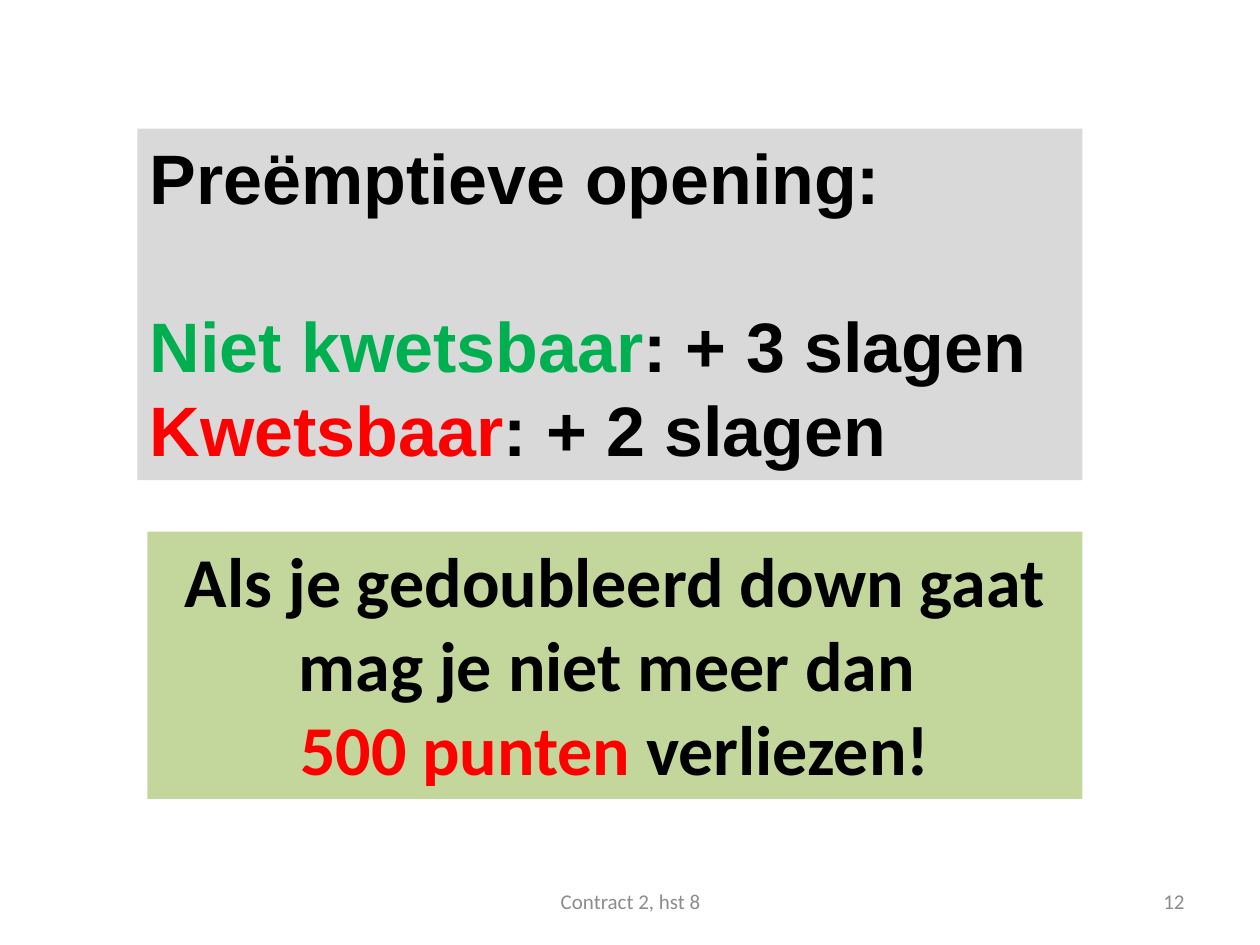
from pptx import Presentation
from pptx.dml.color import RGBColor
from pptx.enum.shapes import MSO_SHAPE as Shape
from pptx.enum.text import MSO_ANCHOR as Anchor, MSO_AUTO_SIZE as AutoSize, PP_ALIGN as Align
from pptx.util import Inches, Pt

BLACK = RGBColor(0x00, 0x00, 0x00)
GREEN = RGBColor(0x00, 0xB0, 0x50)
RED = RGBColor(0xFF, 0x00, 0x00)
GREY = RGBColor(0x8C, 0x8C, 0x8C)
LIGHT_GREY = RGBColor(0xD9, 0xD9, 0xD9)
LIGHT_GREEN = RGBColor(0xC3, 0xD6, 0x9B)


class SlideBuilder:
    """Holds the text styles and the current slide."""

    BODY = {"size": Pt(40), "bold": True}
    FOOTER = {"size": Pt(12), "bold": False}

    def __init__(self, slide):
        self.slide = slide

    def fill_text(self, frame, paragraphs, style, align):
        """Each paragraph is a list of (text, colour) runs."""
        frame.word_wrap = True
        for index, runs in enumerate(paragraphs):
            paragraph = frame.add_paragraph() if index else frame.paragraphs[0]
            paragraph.alignment = align
            for text, colour in runs:
                run = paragraph.add_run()
                run.text = text
                run.font.color.rgb = colour
                for name, value in style.items():
                    setattr(run.font, name, value)

    def panel(self, box, fill, paragraphs, font, align):
        panel = self.slide.shapes.add_shape(Shape.RECTANGLE, *map(Inches, box))
        panel.shadow.inherit = False
        panel.fill.solid()
        panel.fill.fore_color.rgb = fill
        panel.line.fill.background()
        frame = panel.text_frame
        frame.vertical_anchor = Anchor.TOP
        frame.auto_size = AutoSize.SHAPE_TO_FIT_TEXT
        self.fill_text(frame, paragraphs, {**self.BODY, "name": font}, align)
        for paragraph in frame.paragraphs:
            paragraph.line_spacing = Pt(48)
        return frame

    def footer(self, box, text, align):
        frame = self.slide.shapes.add_textbox(*map(Inches, box)).text_frame
        frame.vertical_anchor = Anchor.MIDDLE
        self.fill_text(frame, [[(text, GREY)]], {**self.FOOTER, "name": "Calibri"}, align)


def main():
    deck = Presentation()
    deck.slide_width, deck.slide_height = Inches(10), Inches(7.5)
    builder = SlideBuilder(deck.slides.add_slide(deck.slide_layouts[6]))

    # Rule for the opening bid, with a line of space below its heading
    opening = builder.panel((1.09, 1.02, 7.5, 2.79), LIGHT_GREY, [
        [("Preëmptieve opening:", BLACK)],
        [("Niet kwetsbaar", GREEN), (": + 3 slagen", BLACK)],
        [("Kwetsbaar", RED), (": + 2 slagen", BLACK)],
    ], "Arial", Align.LEFT)
    opening.paragraphs[0].space_after = Pt(48)

    # Limit on the loss
    builder.panel((1.17, 4.22, 7.42, 2.12), LIGHT_GREEN, [
        [("Als je gedoubleerd down gaat mag je niet meer dan ", BLACK)],
        [("500 punten ", RED), ("verliezen!", BLACK)],
    ], "Calibri", Align.CENTER)

    # Footer
    builder.footer((7.17, 6.95, 2.33, 0.4), "12", Align.RIGHT)
    builder.footer((3.42, 6.95, 3.17, 0.4), "Contract 2, hst 8", Align.CENTER)

    deck.save("out.pptx")


if __name__ == "__main__":
    main()
